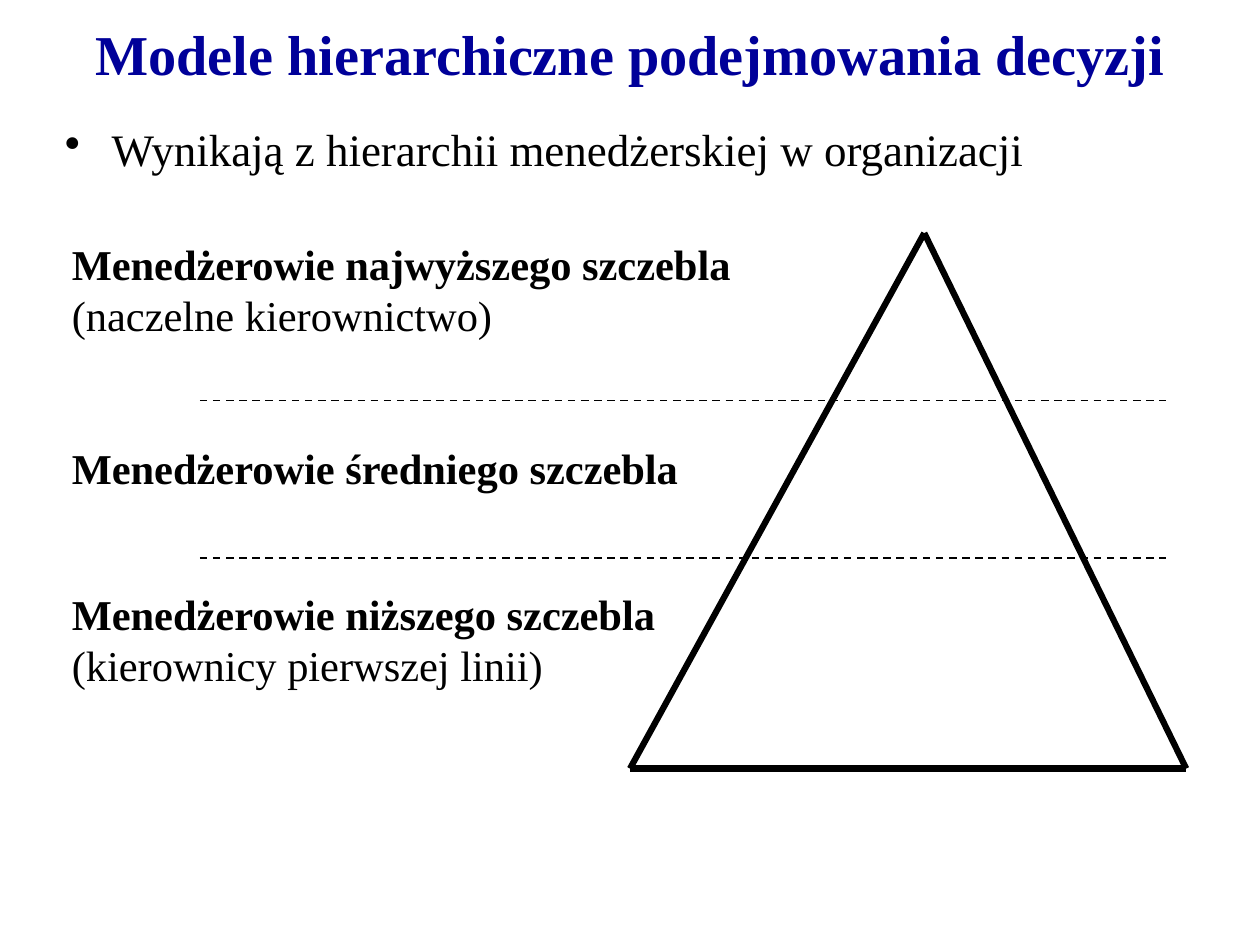
from lxml.etree import SubElement
from pptx import Presentation
from pptx.dml.color import RGBColor
from pptx.enum.dml import MSO_LINE
from pptx.enum.shapes import MSO_CONNECTOR
from pptx.enum.text import MSO_ANCHOR, MSO_AUTO_SIZE, PP_ALIGN
from pptx.oxml.ns import qn
from pptx.util import Inches, Pt

BLACK = "000000"

deck = Presentation()
deck.slide_width, deck.slide_height = Inches(14), Inches(10.5)
page = deck.slides.add_slide(deck.slide_layouts[6])


def style(para, size, bold=False, color=BLACK):
    para.line_spacing = Pt(size * 1.2)
    para.font.name = "Times New Roman"
    para.font.size = Pt(size)
    para.font.bold = bold
    para.font.color.rgb = RGBColor.from_string(color)


def add_line(start, end, width):
    line = page.shapes.add_connector(
        MSO_CONNECTOR.STRAIGHT, *[Inches(value) for value in start + end])
    line.line.color.rgb = RGBColor.from_string(BLACK)
    line.line.width = Pt(width)
    SubElement(line._element.spPr, qn("a:effectLst"))
    return line


# Bullet and title
bullet_box = page.shapes.add_textbox(Inches(0.58), Inches(1.28), Inches(12.95), Inches(1.13))
title_box = page.shapes.add_textbox(Inches(0), Inches(0.12), Inches(14), Inches(0.93))
for box in (bullet_box, title_box):
    frame = box.text_frame
    frame.word_wrap = True
    frame.margin_left = frame.margin_right = Inches(0.14)
    frame.margin_top = frame.margin_bottom = Inches(0.07)

para = bullet_box.text_frame.paragraphs[0]
para.text = "Wynikają z hierarchii menedżerskiej w organizacji"
properties = para._p.get_or_add_pPr()
properties.set("marL", str(Inches(0.52)))
properties.set("indent", str(-Inches(0.52)))
SubElement(properties, qn("a:buChar")).set("char", "•")
style(para, 36)

title_box.text_frame.vertical_anchor = MSO_ANCHOR.MIDDLE
para = title_box.text_frame.paragraphs[0]
para.text = "Modele hierarchiczne podejmowania decyzji"
para.alignment = PP_ALIGN.CENTER
style(para, 45, True, "000099")

# Management levels: text, bold, space before
levels = [
    ("Menedżerowie najwyższego szczebla", True, 0),
    ("(naczelne kierownictwo)", False, 0),
    ("Menedżerowie średniego szczebla", True, 81.6),
    ("Menedżerowie niższego szczebla", True, 75.6),
    ("(kierownicy pierwszej linii)", False, 0),
]
level_box = page.shapes.add_textbox(Inches(0.7), Inches(2.6), Inches(7.73), Inches(5.18))
frame = level_box.text_frame
frame.word_wrap = False
frame.auto_size = MSO_AUTO_SIZE.SHAPE_TO_FIT_TEXT
for index, (text, bold, gap) in enumerate(levels):
    para = frame.add_paragraph() if index else frame.paragraphs[0]
    para.text = text
    para.space_before = Pt(gap)
    style(para, 34, bold)

# Pyramid sides
apex, left, right = (10.27, 2.59), (7, 8.54), (13.18, 8.54)
for start, end in ((apex, left), (apex, right), (left, right)):
    add_line(start, end, 5)

# Dashed level dividers
for y in (4.45, 6.2):
    add_line((2.22, y), (12.95, y), 1.5).line.dash_style = MSO_LINE.DASH

deck.save("out.pptx")
